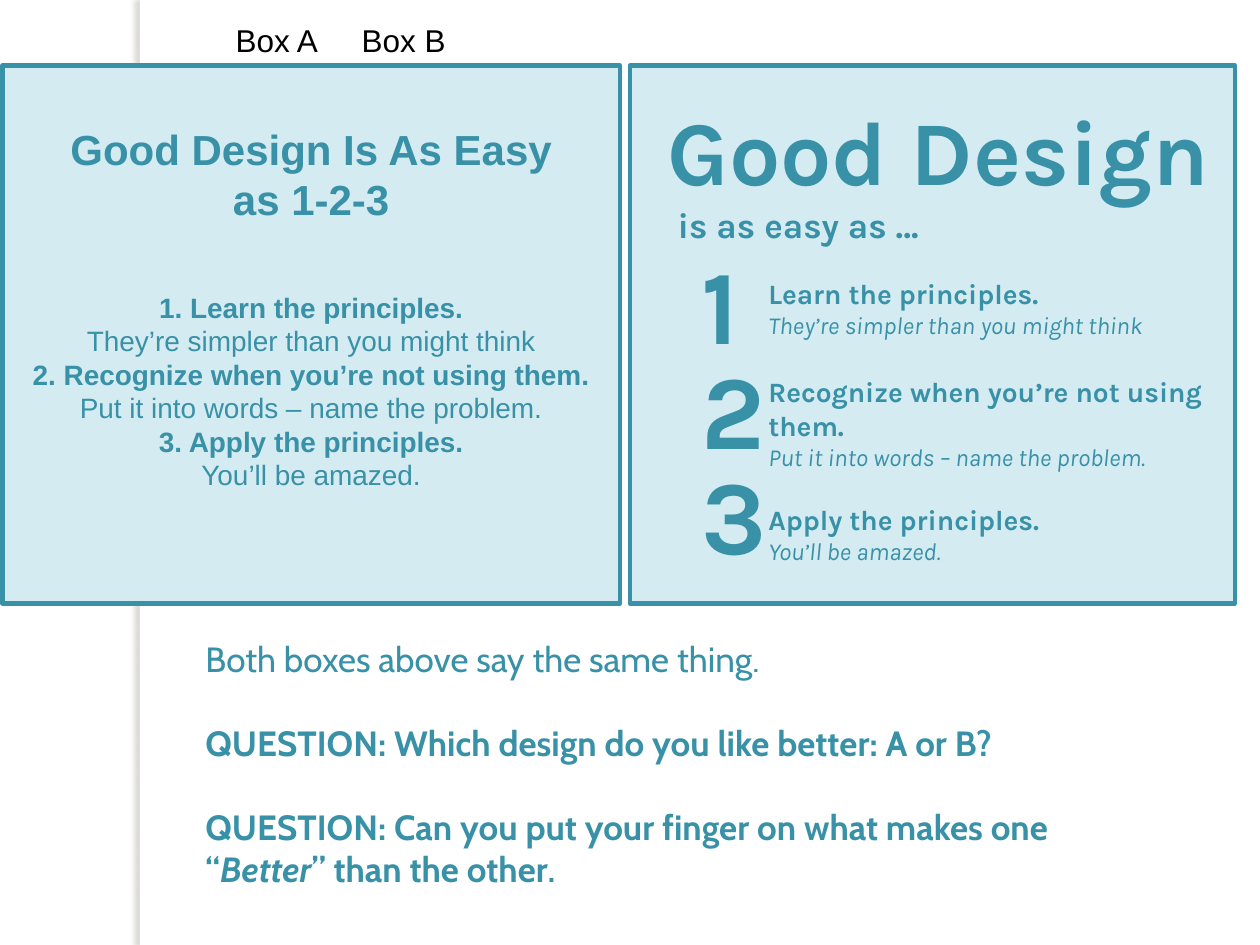
from lxml.etree import SubElement
from pptx import Presentation
from pptx.dml.color import RGBColor
from pptx.enum.shapes import MSO_SHAPE as Shape
from pptx.enum.text import MSO_ANCHOR as Anchor, MSO_AUTO_SIZE as AutoSize, PP_ALIGN as Align
from pptx.oxml import parse_xml
from pptx.oxml.ns import nsdecls, qn
from pptx.util import Inches, Pt

COLORS = {"teal": "3891A7", "pale": "D4EBF1", "white": "FFFFFF", "black": "000000"}
STEPS = [
    ("Learn the principles.", "They’re simpler than you might think"),
    ("Recognize when you’re not using them.", "Put it into words – name the problem."),
    ("Apply the principles.", "You’ll be amazed."),
]
STEP_GAPS = (18, 20, 18)


def rgb(name):
    return RGBColor.from_string(COLORS[name])


def add_run(p, text, size=16, font="Arial", color="teal", bold=False, italic=False, spacing=None):
    r = p.add_run()
    r.text = text
    f = r.font
    f.size, f.name, f.bold, f.italic = Pt(size), font, bold, italic
    f.color.rgb = rgb(color)
    if spacing:
        f._element.set("spc", str(spacing * 100))
    return r


class SlideBuilder:
    """Lengths are percentages of the slide's width and height."""

    def __init__(self, prs):
        self.prs = prs
        self.s = prs.slides.add_slide(prs.slide_layouts[1])

    def area(self, x, y, w, h):
        width, height = self.prs.slide_width, self.prs.slide_height
        return [round(v * side / 100) for v, side in zip((x, y, w, h), (width, height) * 2)]

    def text_frame(self, sp, top=0.05):
        tf = sp.text_frame
        tf.word_wrap, tf.auto_size = True, AutoSize.NONE
        tf.vertical_anchor, tf.margin_top = Anchor.TOP, Inches(top)
        return tf

    def paragraph(self, tf, before=0, line=1.0, indent=0.0, align=Align.LEFT, tab=None):
        first = tf.paragraphs[0]
        p = tf.add_paragraph() if first.runs else first
        pPr = p._p.get_or_add_pPr()
        pPr.set("marL", str(Inches(indent)))
        pPr.set("indent", "0")
        SubElement(pPr, qn("a:buNone"))
        if tab:
            tabs = SubElement(pPr, qn("a:tabLst"))
            SubElement(tabs, qn("a:tab"), pos=str(Inches(tab)), algn="l")
        p.alignment, p.line_spacing = align, line
        p.space_before, p.space_after = Pt(before), Pt(0)
        return p

    def placeholder(self, sp, *area):
        sp.left, sp.top, sp.width, sp.height = self.area(*area)
        return self.text_frame(sp)

    def text_box(self, *area):
        return self.text_frame(self.s.shapes.add_textbox(*self.area(*area)))

    def rectangle(self, *area, fill, line=None):
        sp = self.s.shapes.add_shape(Shape.RECTANGLE, *self.area(*area))
        sp.shadow.inherit = False
        sp.fill.solid()
        sp.fill.fore_color.rgb = rgb(fill)
        if line:
            sp.line.color.rgb, sp.line.width = rgb(line), Pt(2.5)
        else:
            sp.line.fill.background()
        return sp

    def panel(self, x, width, top):
        sp = self.rectangle(x, 6.93, width, 56.93, fill="pale", line="teal")
        return self.text_frame(sp, top)

    def shadowed_strip(self, *area):
        sp = self.rectangle(*area, fill="white")
        effects = sp._element.spPr.find(qn("a:effectLst"))
        effects.append(parse_xml(
            f'<a:outerShdw {nsdecls("a")} blurRad="{Pt(3)}" dist="{Pt(3)}" dir="10800000">'
            '<a:srgbClr val="736F63"><a:alpha val="25000"/></a:srgbClr></a:outerShdw>'))


def add_plain_design(b):
    tf = b.panel(0.2, 49, top=0.46)
    for text in ("Good Design Is As Easy", "as 1-2-3"):
        p = b.paragraph(tf, line=Pt(28.6), align=Align.CENTER)
        add_run(p, text, size=24, bold=True)
    for number, (step, detail) in enumerate(STEPS, 1):
        for text, bold in ((f"{number}. {step}", True), (detail, False)):
            before = 38 if bold and number == 1 else 0
            p = b.paragraph(tf, before=before, line=Pt(19.2), align=Align.CENTER)
            add_run(p, text, bold=bold)


def add_styled_design(b):
    tf = b.panel(50, 48, top=0.76)
    for text, size, indent in (("Good Design", 52, 0.2), ("is as easy as …", 20, 0.28)):
        p = b.paragraph(tf, line=Pt(24), indent=indent)
        add_run(p, text, size=size, font="Karla", bold=True)
    for (step, detail), gap in zip(STEPS, STEP_GAPS):
        add_run(b.paragraph(tf, before=gap, indent=1), step, font="Karla", bold=True)
        add_run(b.paragraph(tf, indent=1), detail, size=14, font="Karla", italic=True)

    numbers = b.text_box(54.7, 26.93, 42.5, 34.93)
    for number in range(1, len(STEPS) + 1):
        p = b.paragraph(numbers, line=Pt(60))
        add_run(p, str(number), size=60, font="Karla", bold=True, spacing=-3)


def add_questions(b, body):
    tf = b.placeholder(body, 15.3, 66.8, 77.2, 28.27)
    style = {"size": 20, "font": "Cabin"}
    bold = {**style, "bold": True}
    add_run(b.paragraph(tf), "Both boxes above say the same thing.", **style)
    p = b.paragraph(tf, before=24)
    add_run(p, "QUESTION: Which design do you like better: A or B?", **bold)
    p = b.paragraph(tf, before=24)
    add_run(p, "QUESTION: Can you put your finger on what makes one “", **bold)
    add_run(p, "Better", italic=True, **bold)
    add_run(p, "” than the other", **bold)
    add_run(p, ".", **{**bold, "size": 18})


def main():
    prs = Presentation()
    prs.slide_width, prs.slide_height = Inches(10), Inches(7.5)
    b = SlideBuilder(prs)
    title, body = b.s.placeholders
    b.shadowed_strip(11.1, 0, 0.8, 100)
    add_questions(b, body)
    add_plain_design(b)
    add_styled_design(b)
    labels = b.placeholder(title, 17.7, 1.6, 64.6, 5.33)
    add_run(b.paragraph(labels, tab=4.18), "Box A\tBox B", size=18, color="black")
    prs.save("out.pptx")


if __name__ == "__main__":
    main()
